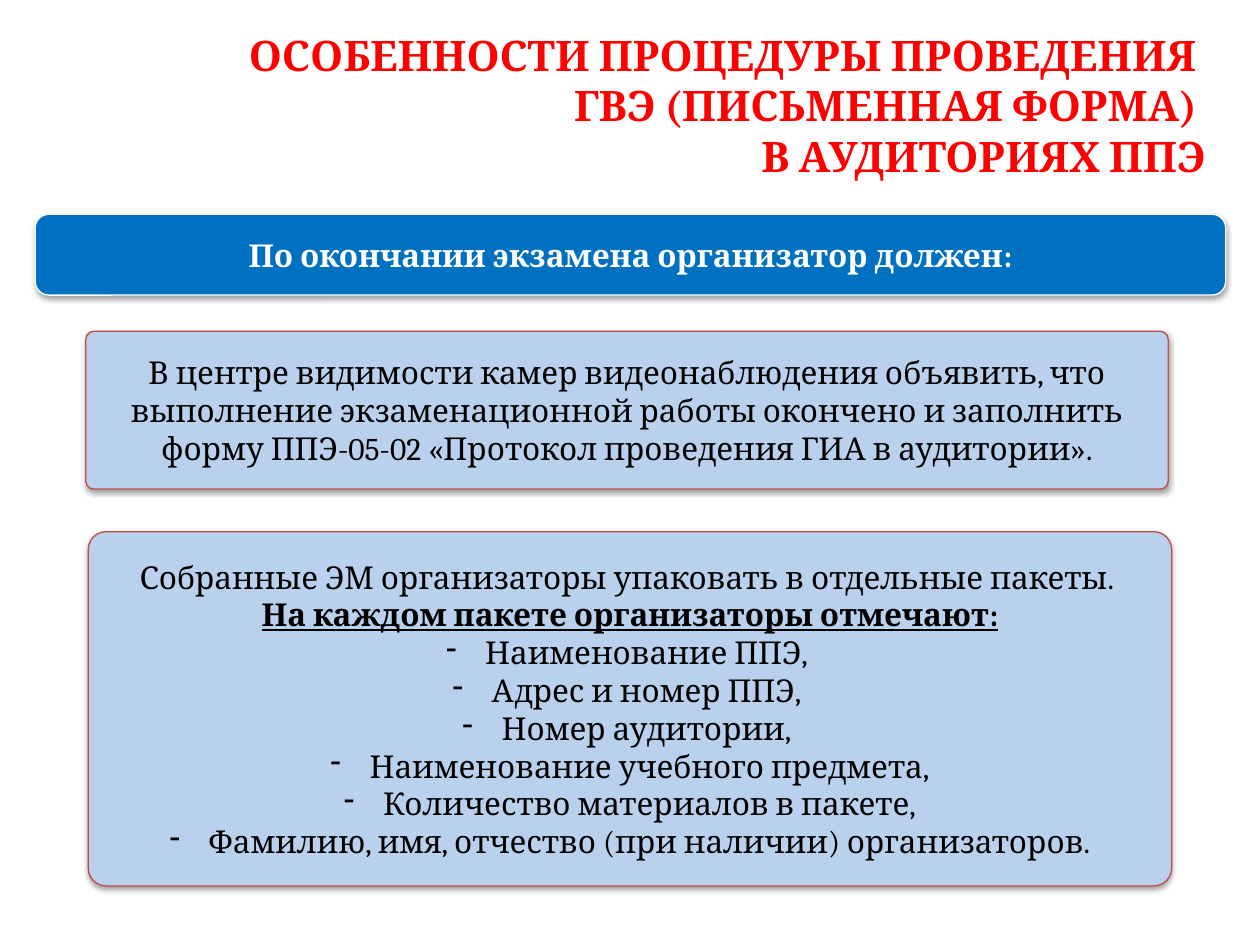
from lxml import etree
from pptx import Presentation
from pptx.dml.color import RGBColor
from pptx.enum.shapes import MSO_SHAPE
from pptx.enum.text import MSO_ANCHOR, PP_ALIGN
from pptx.oxml.ns import qn
from pptx.util import Cm, Pt

ROUND = MSO_SHAPE.ROUNDED_RECTANGLE
MIDDLE = MSO_ANCHOR.MIDDLE
CENTER, RIGHT = PP_ALIGN.CENTER, PP_ALIGN.RIGHT
FONT = "Cambria"
COLORS = {
    "title": "FF0000",
    "head": "0070C0",
    "card": "B9D1ED",
    "edge": "BF4C48",
    "white": "FFFFFF",
    "black": "000000",
}
TITLE = [
    "ОСОБЕННОСТИ ПРОЦЕДУРЫ ПРОВЕДЕНИЯ ",
    "ГВЭ (ПИСЬМЕННАЯ ФОРМА) ",
    "В АУДИТОРИЯХ ППЭ",
]
HEAD = "По окончании экзамена организатор должен:"
NOTICE = (
    "В центре видимости камер видеонаблюдения объявить, что выполнение "
    "экзаменационной работы окончено и заполнить форму ППЭ-05-02 "
    "«Протокол проведения ГИА в аудитории»."
)
PACK = "Собранные ЭМ организаторы упаковать в отдельные пакеты. "
LABEL = "На каждом пакете организаторы отмечают:"
ITEMS = [
    "Наименование ППЭ, ",
    "Адрес и номер ППЭ, ",
    "Номер аудитории, ",
    "Наименование учебного предмета,",
    "Количество материалов в пакете,",
    "Фамилию, имя, отчество (при наличии) организаторов.",
]


def color(name):
    return RGBColor.from_string(COLORS[name])


def add_run(para, text, ink="black", size=18, bold=False, under=False):
    run = para.add_run()
    run.text = text
    font = run.font
    font.name, font.size = FONT, Pt(size)
    font.bold, font.underline = bold, under
    font.color.rgb = color(ink)


def add_para(frame, first=False):
    para = frame.paragraphs[0] if first else frame.add_paragraph()
    para.alignment = CENTER
    return para


def add_dash(para):
    """Give the paragraph a dash bullet with a hanging indent."""
    props = para._p.get_or_add_pPr()
    props.set("marL", str(Cm(0.79)))
    props.set("indent", str(-Cm(0.79)))
    etree.SubElement(props, qn("a:buFontTx"))
    etree.SubElement(props, qn("a:buChar"), char="-")


def add_shadow(shape):
    """Put a soft shadow straight below the shape."""
    shape.shadow.inherit = False
    effects = shape.element.spPr.find(qn("a:effectLst"))
    outer = etree.SubElement(
        effects, qn("a:outerShdw"), blurRad=str(Pt(3.1)), dist=str(Pt(1.6)),
        dir="5400000", rotWithShape="0")
    tint = etree.SubElement(outer, qn("a:srgbClr"), val=COLORS["black"])
    etree.SubElement(tint, qn("a:alpha"), val="38000")


def add_card(slide, box, fill, edge, round_by):
    shape = slide.shapes.add_shape(ROUND, *map(Cm, box))
    shape.adjustments[0] = round_by
    shape.fill.solid()
    shape.fill.fore_color.rgb = color(fill)
    shape.line.color.rgb = color(edge)
    shape.line.width = Pt(0.75)
    add_shadow(shape)
    frame = shape.text_frame
    frame.word_wrap = True
    frame.vertical_anchor = MIDDLE
    return frame


def add_title(slide):
    frame = slide.shapes.add_textbox(
        Cm(1.7), Cm(0.53), Cm(22.86), Cm(3.18)).text_frame
    frame.word_wrap = True
    frame.vertical_anchor = MIDDLE
    para = frame.paragraphs[0]
    para.alignment = RIGHT
    for row, text in enumerate(TITLE):
        if row:
            para.add_line_break()
        add_run(para, text, "title", 24, bold=True)


def main():
    deck = Presentation()
    deck.slide_width, deck.slide_height = Cm(25.4), Cm(19.05)
    slide = deck.slides.add_slide(deck.slide_layouts[6])

    add_title(slide)

    head = add_card(slide, (0.71, 4.32, 24, 1.63), "head", "white", 0.17)
    add_run(add_para(head, True), HEAD, "white", bold=True)

    notice = add_card(slide, (1.73, 6.68, 21.82, 3.18), "card", "edge", 0.05)
    add_run(add_para(notice, True), NOTICE)

    pack = add_card(slide, (1.78, 10.72, 21.84, 7.14), "card", "edge", 0.05)
    add_run(add_para(pack, True), PACK)
    add_run(add_para(pack), LABEL, bold=True, under=True)
    for item in ITEMS:
        para = add_para(pack)
        add_dash(para)
        add_run(para, item)

    deck.save("out.pptx")


if __name__ == "__main__":
    main()
